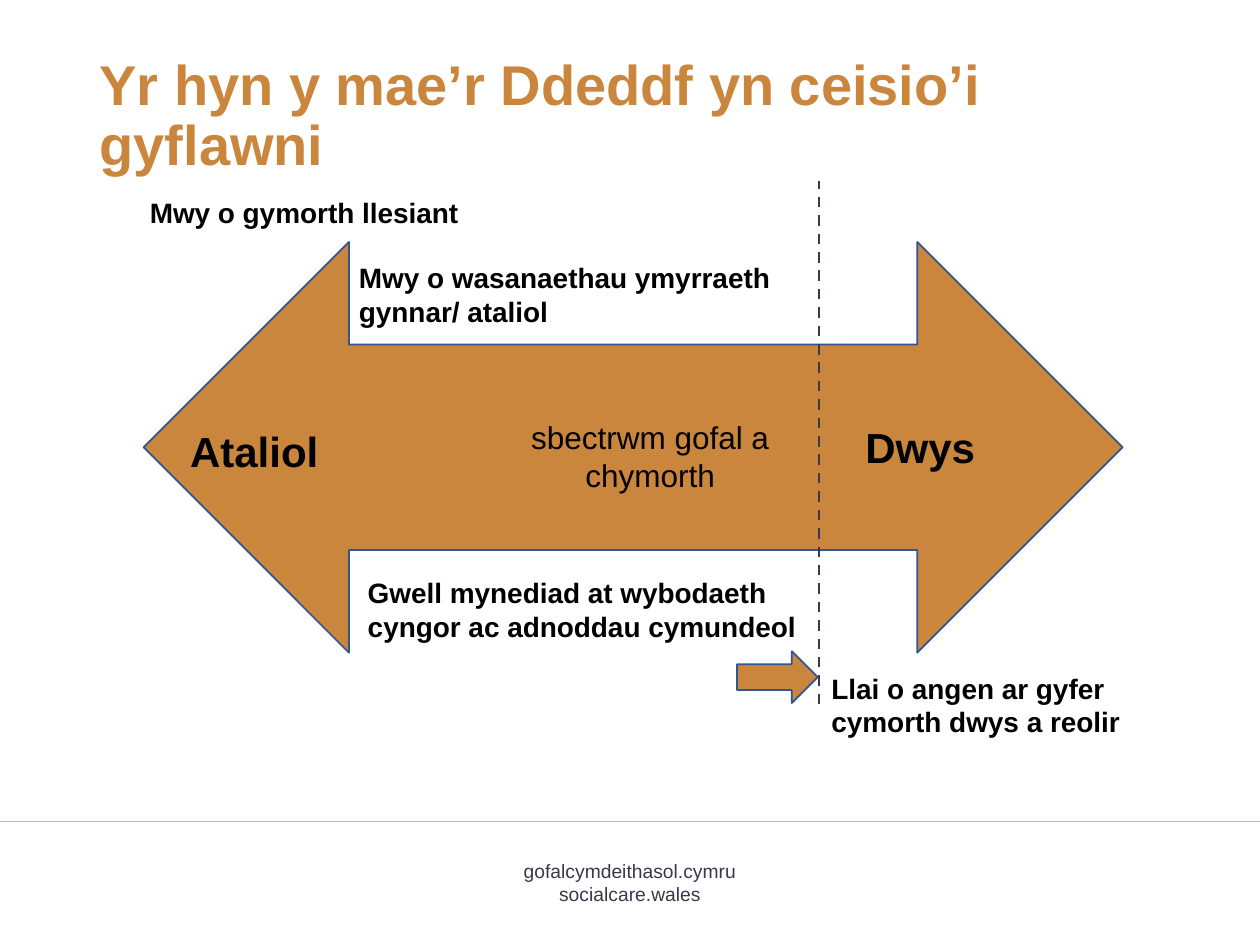
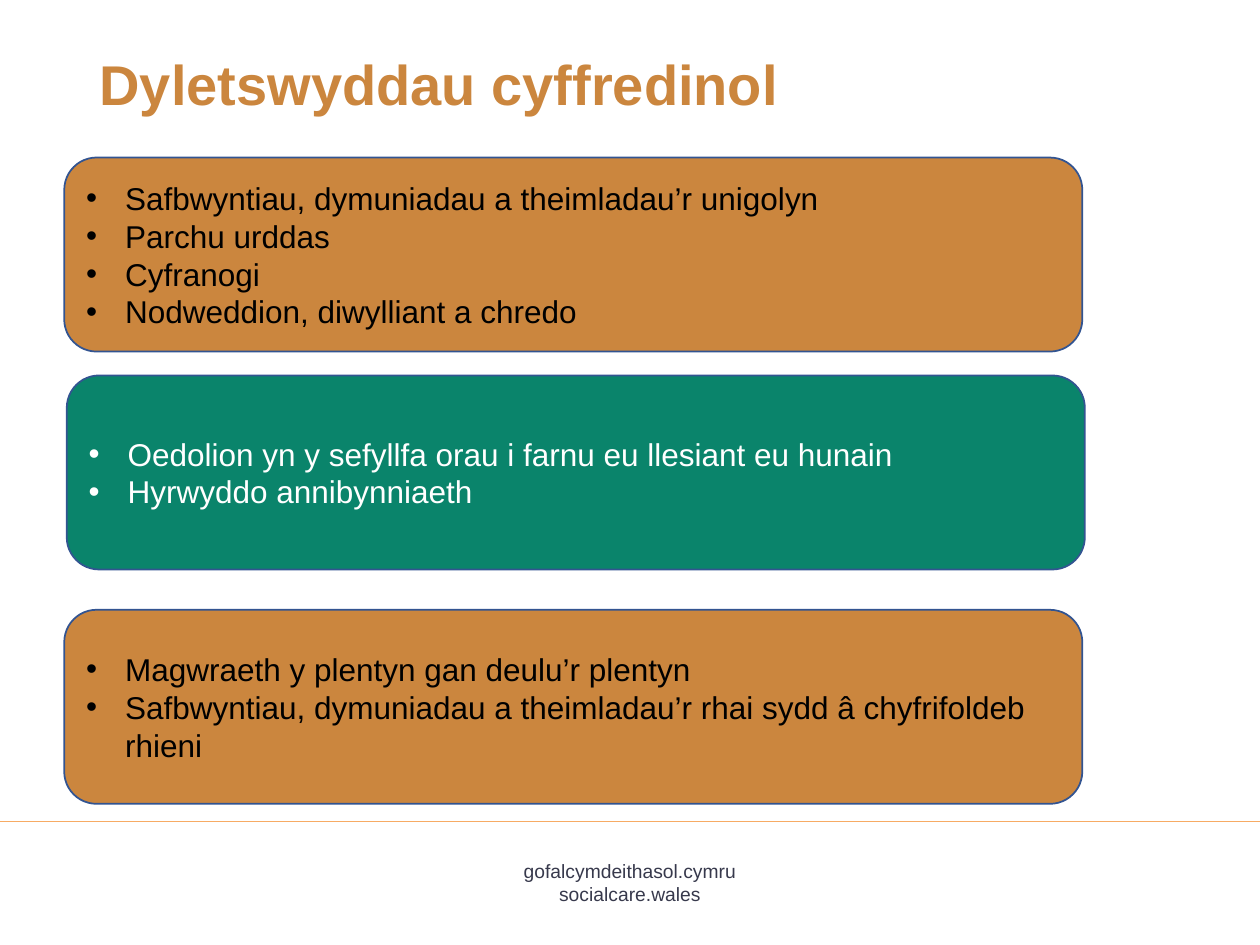
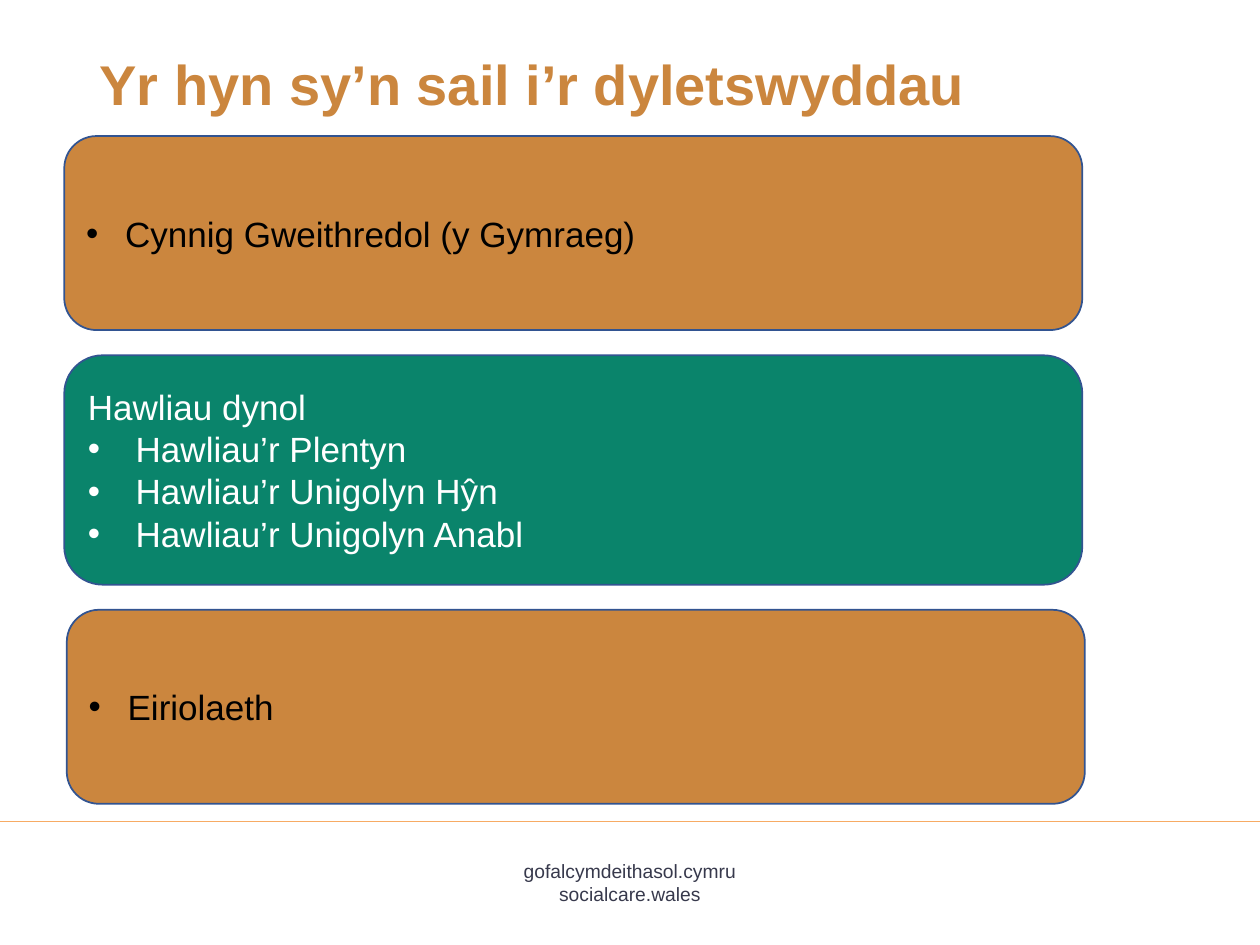
from dataclasses import dataclass
from lxml.etree import SubElement
from pptx import Presentation
from pptx.dml.color import RGBColor
from pptx.enum.dml import MSO_LINE as Dash
from pptx.enum.shapes import MSO_CONNECTOR as Link, MSO_SHAPE as Kind
from pptx.enum.text import MSO_ANCHOR as Anchor, MSO_AUTO_SIZE as Fit, PP_ALIGN as Align
from pptx.oxml.ns import qn
from pptx.util import Inches, Pt

WIDE, HIGH = Inches(10), Inches(7.5)
FONT = "Arial"
GOLD, GREEN, BLUE = "CB863E", "0A846B", "325491"
PEACH, SLATE, BLACK, WHITE = "F7AB64", "37394C", "000000", "FFFFFF"


@dataclass(frozen=True)
class Area:
    """Shares of the slide in percent."""
    left: float
    top: float
    width: float
    height: float

    def place(self) -> tuple[int, int, int, int]:
        return (across(self.left), down(self.top),
                across(self.width), down(self.height))


@dataclass(frozen=True)
class Label:
    text: str
    left: float
    top: float
    width: float
    size: int = 16
    bold: bool = True
    align: Align = Align.LEFT


@dataclass(frozen=True)
class Panel:
    area: Area
    items: tuple[str, ...]
    size: int = 18
    fill: str = GOLD
    ink: str = BLACK
    head: str = ""
    indent: float = 0.31


def across(share: float) -> int:
    return round(WIDE * share / 100)


def down(share: float) -> int:
    return round(HIGH * share / 100)


def color(code: str) -> RGBColor:
    return RGBColor.from_string(code)


def style(para, size: int, ink: str, bold: bool = False, align=Align.LEFT) -> None:
    para.alignment = align
    font = para.font
    font.name, font.size, font.bold = FONT, Pt(size), bold
    font.color.rgb = color(ink)


def bullet(para, indent: float) -> None:
    props = para._p.get_or_add_pPr()
    props.set("marL", str(Inches(indent)))
    props.set("indent", str(-Inches(indent)))
    SubElement(props, qn("a:buFont"), typeface=FONT)
    SubElement(props, qn("a:buChar"), char="•")


def write(frame, lines: list[str]) -> list:
    frame.word_wrap = True
    frame.text = "\n".join(lines)
    return list(frame.paragraphs)


def block(slide, kind: Kind, area: Area, fill: str = GOLD):
    shape = slide.shapes.add_shape(kind, *area.place())
    shape.shadow.inherit = False
    shape.fill.solid()
    shape.fill.fore_color.rgb = color(fill)
    shape.line.color.rgb = color(BLUE)
    shape.line.width = Pt(1)
    return shape


def rule(slide, start: tuple[float, float], end: tuple[float, float],
         ink: str, width: float):
    line = slide.shapes.add_connector(
        Link.STRAIGHT, across(start[0]), down(start[1]), across(end[0]), down(end[1]))
    line.line.color.rgb = color(ink)
    line.line.width = Pt(width)
    SubElement(line._element.spPr, qn("a:effectLst"))
    return line


def label(slide, item: Label) -> None:
    area = Area(item.left, item.top, item.width, 14)
    frame = slide.shapes.add_textbox(*area.place()).text_frame
    frame.vertical_anchor = Anchor.MIDDLE
    for para in write(frame, [item.text]):
        style(para, item.size, BLACK, item.bold, item.align)


def panel(slide, item: Panel) -> None:
    frame = block(slide, Kind.ROUNDED_RECTANGLE, item.area, item.fill).text_frame
    frame.vertical_anchor = Anchor.MIDDLE
    heads = [item.head] if item.head else []
    for spot, para in enumerate(write(frame, [*heads, *item.items])):
        if spot >= len(heads):
            bullet(para, item.indent)
        style(para, item.size, item.ink)


def start(deck, title: str, width: float = 73.5):
    slide = deck.slides.add_slide(deck.slide_layouts.get_by_name("Title Only"))
    foot = slide.shapes.add_textbox(*Area(38.7, 90.27, 22.6, 6.13).place())
    for para in write(foot.text_frame, ["gofalcymdeithasol.cymru", "socialcare.wales"]):
        style(para, 11, SLATE, align=Align.CENTER)
    rule(slide, (0, 86.93), (100, 86.93), PEACH, 1)
    head = slide.shapes.title
    head.left, head.top, head.width, head.height = Area(6.9, 5.33, width, 15.07).place()
    frame = head.text_frame
    frame.auto_size = Fit.NONE
    frame.vertical_anchor = Anchor.TOP
    for para in write(frame, [title]):
        para.line_spacing = 0.9
        style(para, 32, GOLD, True)
    return slide


LABELS = (
    Label("sbectrwm gofal a chymorth", 40.3, 41.2, 22.6, 18, False, Align.CENTER),
    Label("Ataliol", 14.1, 40.67, 29.1, 24),
    Label("Dwys", 67.7, 40.27, 16.6, 24),
    Label("Mwy o wasanaethau ymyrraeth gynnar/ ataliol", 27.5, 24.13, 38.5),
    Label("Gwell mynediad at wybodaeth cyngor ac adnoddau cymundeol", 28.2, 57.47, 39.5),
    Label("Mwy o gymorth llesiant", 10.9, 15.47, 32.5),
    Label("Llai o angen ar gyfer cymorth dwys a reolir", 65, 67.6, 32.5),
)


def row(top: float, left: float = 5.1, height: float = 20.53) -> Area:
    return Area(left, top, 80.8, height)


DUTIES = (
    Panel(row(16.67), (
        "Safbwyntiau, dymuniadau a theimladau’r unigolyn",
        "Parchu urddas",
        "Cyfranogi",
        "Nodweddion, diwylliant a chredo")),
    Panel(row(39.73, 5.3), (
        "Oedolion yn y sefyllfa orau i farnu eu llesiant eu hunain",
        "Hyrwyddo annibynniaeth"), fill=GREEN, ink=WHITE),
    Panel(row(64.53), (
        "Magwraeth y plentyn gan deulu’r plentyn",
        "Safbwyntiau, dymuniadau a theimladau’r rhai sydd â chyfrifoldeb rhieni")),
)

BASES = (
    Panel(row(14.4), ("Cynnig Gweithredol (y Gymraeg)",), 20),
    Panel(row(37.6, height=24.27), (
        "Hawliau’r Plentyn",
        "Hawliau’r Unigolyn Hŷn",
        "Hawliau’r Unigolyn Anabl"), 20, GREEN, WHITE, "Hawliau dynol", 0.38),
    Panel(row(64.53, 5.3), ("Eiriolaeth",), 20),
)


def main() -> None:
    deck = Presentation()
    deck.slide_width, deck.slide_height = WIDE, HIGH

    slide = start(deck, "Yr hyn y mae’r Ddeddf yn ceisio’i gyflawni", 74.8)
    block(slide, Kind.LEFT_RIGHT_ARROW, Area(11.4, 25.6, 77.7, 43.47))
    for item in LABELS:
        label(slide, item)
    block(slide, Kind.RIGHT_ARROW, Area(58.5, 68.93, 6.4, 5.47))
    rule(slide, (65, 74.53), (65, 19.2), SLATE, 1.5).line.dash_style = Dash.DASH

    for title, panels in (("Dyletswyddau cyffredinol", DUTIES),
                          ("Yr hyn sy’n sail i’r dyletswyddau", BASES)):
        slide = start(deck, title)
        for item in panels:
            panel(slide, item)

    deck.save("out.pptx")


if __name__ == "__main__":
    main()
